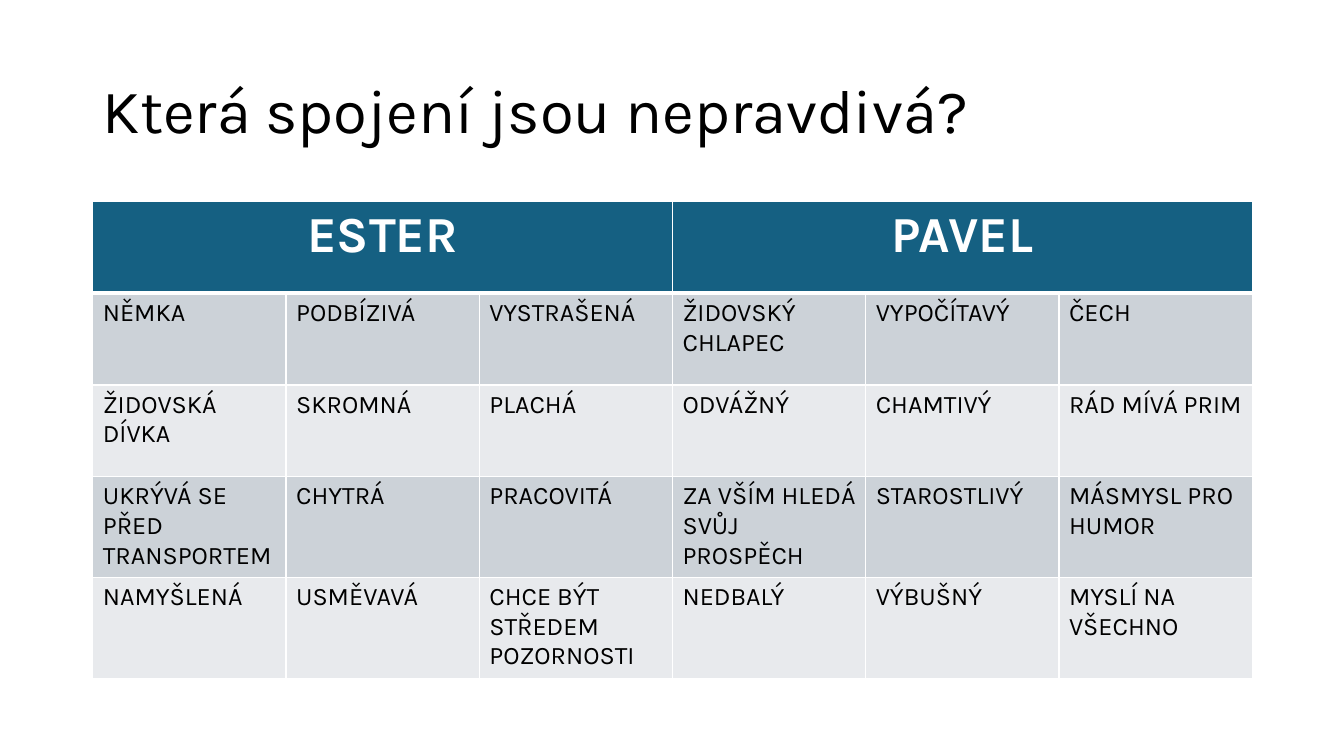
from pptx import Presentation
from pptx.dml.color import RGBColor
from pptx.enum.text import MSO_ANCHOR as Anchor, PP_ALIGN as Align
from pptx.oxml import parse_xml
from pptx.oxml.ns import nsdecls
from pptx.util import Inches, Pt

TITLE = "Která spojení jsou nepravdivá?"
PEOPLE = ["ESTER", "PAVEL"]
TRAITS = [
    ["NĚMKA", "PODBÍZIVÁ", "VYSTRAŠENÁ", "ŽIDOVSKÝ CHLAPEC", "VYPOČÍTAVÝ", "ČECH"],
    ["ŽIDOVSKÁ DÍVKA", "SKROMNÁ", "PLACHÁ", "ODVÁŽNÝ", "CHAMTIVÝ", "RÁD MÍVÁ PRIM"],
    ["UKRÝVÁ SE PŘED TRANSPORTEM", "CHYTRÁ", "PRACOVITÁ",
     "ZA VŠÍM HLEDÁ SVŮJ PROSPĚCH", "STAROSTLIVÝ", "MÁSMYSL PRO HUMOR"],
    ["NAMYŠLENÁ", "USMĚVAVÁ", "CHCE BÝT STŘEDEM POZORNOSTI",
     "NEDBALÝ", "VÝBUŠNÝ", "MYSLÍ NA VŠECHNO"],
]


def color(value):
    return RGBColor.from_string(value)


class SlideBuilder:
    font = "Karla"
    ink = "000000"
    paper = "FFFFFF"
    header_fill = "156082"
    band_fills = ["CCD2D8", "E8EAED"]

    def __init__(self, deck):
        self.page = deck.slides.add_slide(deck.slide_layouts[6])

    def add_text(self, frame, text, size, ink, bold=False, align=Align.LEFT, spacing=1.0):
        para = frame.paragraphs[0]
        span = para.add_run()
        span.text = text
        formats = [
            (para, {"alignment": align, "line_spacing": spacing}),
            (span.font, {"name": self.font, "size": Pt(size), "bold": bold}),
        ]
        for target, values in formats:
            for key, value in values.items():
                setattr(target, key, value)
        span.font.color.rgb = color(ink)

    def title(self, text, left, top, width, height):
        box = self.page.shapes.add_textbox(*map(Inches, (left, top, width, height)))
        frame = box.text_frame
        for key, value in {"word_wrap": True, "vertical_anchor": Anchor.MIDDLE}.items():
            setattr(frame, key, value)
        self.add_text(frame, text, 44, self.ink, spacing=0.9)

    def paint_cell(self, cell, fill, top=1, bottom=1):
        properties = cell._tc.get_or_add_tcPr()
        for side, points in {"L": 1, "R": 1, "T": top, "B": bottom}.items():
            properties.append(parse_xml(
                f'<a:ln{side} {nsdecls("a")} w="{Pt(points)}"><a:solidFill>'
                f'<a:srgbClr val="{self.paper}"/></a:solidFill></a:ln{side}>'))
        cell.fill.solid()
        cell.fill.fore_color.rgb = color(fill)

    def table(self, people, traits, left, top, width, row_height):
        rows, columns = len(traits) + 1, len(traits[0])
        group = columns // len(people)
        grid = self.page.shapes.add_table(
            rows, columns, *map(Inches, (left, top, width, rows * row_height))).table
        for column in range(columns):
            self.paint_cell(grid.cell(0, column), self.header_fill, bottom=3)
        for index, person in enumerate(people):
            first = grid.cell(0, index * group)
            first.merge(grid.cell(0, (index + 1) * group - 1))
            self.add_text(first.text_frame, person, 36, self.paper, True, Align.CENTER)
        for row, words in enumerate(traits, 1):
            fill = self.band_fills[(row - 1) % 2]
            for column, word in enumerate(words):
                cell = grid.cell(row, column)
                self.paint_cell(cell, fill, top=3 if row == 1 else 1)
                self.add_text(cell.text_frame, word, 18, self.ink)


def main():
    deck = Presentation()
    deck.slide_width, deck.slide_height = Inches(13.33), Inches(7.5)
    builder = SlideBuilder(deck)
    builder.title(TITLE, 0.92, 0.4, 11.5, 1.45)
    builder.table(PEOPLE, TRAITS, 0.92, 2, 11.5, 0.91)
    deck.save("out.pptx")


if __name__ == "__main__":
    main()
